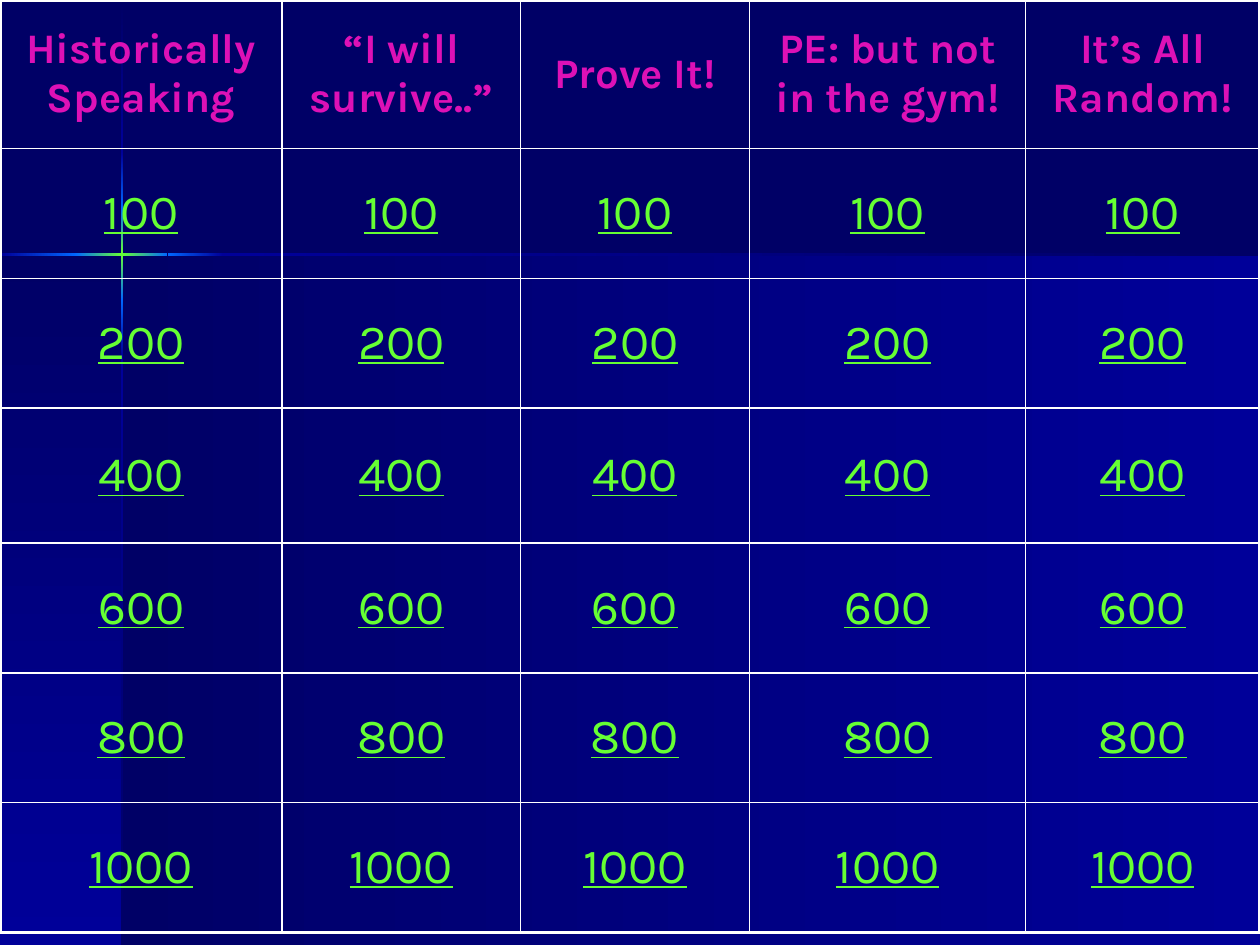
from pptx import Presentation, oxml, util as u
from pptx.dml.color import RGBColor
from pptx.enum import shapes, text
from pptx.oxml import ns

WIDTH, HEIGHT = 10, 7.5
STAR_X, STAR_Y, RAY = 0.97, 2.02, 0.02  # centre of the star, thickness of its rays
FONT = "Karla"
COLORS = {
    "night": "000066",
    "navy": "000099",
    "azure": "0066FF",
    "lime": "66FF33",
    "magenta": "DD11B6",
    "white": "FFFFFF",
}
CATEGORIES = ["Historically Speaking", "“I will survive..”", "Prove It!",
              "PE: but not in the gym!", "It’s All Random!"]
POINTS = [100, 200, 400, 600, 800, 1000]
COLUMN_WIDTHS = [2.24, 1.89, 1.82, 2.19, 1.86]
ROW_HEIGHTS = [1.18, 1.03, 1.03, 1.07, 1.03, 1.03, 1.03]
INNER, OUTER = 1, 2.25  # border widths in points

# Each ray segment: start, end, colours along it
GLOW = ["azure", "lime", "azure"]
VERTICAL_RAY = [
    (0.01, 1.21, ["night", "navy"]),
    (2.82, HEIGHT, ["navy", "night"]),
    (2.38, 2.82, ["azure", "navy"]),
    (1.21, 1.65, ["navy", "azure"]),
    (1.65, 2.38, GLOW),
]
HORIZONTAL_RAY = [
    (1.77, WIDTH, ["navy", "night"]),
    (0, 0.61, ["navy", "azure"]),
    (1.33, 1.77, ["azure", "navy"]),
    (0.6, 1.33, GLOW),
]


def rgb(name):
    return RGBColor.from_string(COLORS[name])


def add_gradient_panel(slide, left, top, width, height, names, angle):
    """Rectangle with evenly spaced colours, running right (0) or down (90)."""
    panel = slide.shapes.add_shape(
        shapes.MSO_SHAPE.RECTANGLE,
        *(u.Inches(v) for v in (left, top, width, height)))
    panel.shadow.inherit = False
    panel.line.fill.background()
    stops = "".join(
        f'<a:gs pos="{100000 * i // (len(names) - 1)}">'
        f'<a:srgbClr val="{COLORS[name]}"/></a:gs>'
        for i, name in enumerate(names))
    gradient = oxml.parse_xml(
        f'<a:gradFill {ns.nsdecls("a")}><a:gsLst>{stops}</a:gsLst>'
        f'<a:lin ang="{angle * 60000}" scaled="0"/></a:gradFill>')
    panel._element.spPr.insert(2, gradient)  # after position and geometry


def add_backdrop(slide):
    # Two large panels below the horizon
    below = HEIGHT - STAR_Y
    fade = ["night", "navy"]
    add_gradient_panel(slide, STAR_X, STAR_Y, WIDTH - STAR_X, below, fade, 0)
    add_gradient_panel(slide, 0, STAR_Y, STAR_X, below, fade, 90)
    # Star rays
    for start, end, names in VERTICAL_RAY:
        add_gradient_panel(slide, STAR_X - RAY / 2, start, RAY, end - start, names, 90)
    for start, end, names in HORIZONTAL_RAY:
        add_gradient_panel(slide, start, STAR_Y - RAY / 2, end - start, RAY, names, 0)


def set_borders(cell, widths):
    for side, points in zip("LRTB", widths):
        cell._tc.get_or_add_tcPr().append(oxml.parse_xml(
            f'<a:ln{side} {ns.nsdecls("a")} w="{u.Pt(points)}"><a:solidFill>'
            f'<a:srgbClr val="{COLORS["white"]}"/></a:solidFill></a:ln{side}>'))


def write_cell(cell, words, size, color, bold=False, underline=False):
    cell.vertical_anchor = text.MSO_ANCHOR.MIDDLE
    paragraph = cell.text_frame.paragraphs[0]
    paragraph.text = words
    paragraph.alignment = text.PP_ALIGN.CENTER
    paragraph._p.get_or_add_pPr().append(oxml.parse_xml(
        f'<a:spcBef {ns.nsdecls("a")}><a:spcPct val="20000"/></a:spcBef>'))
    font = paragraph.runs[0].font
    font.name, font.size = FONT, u.Pt(size)
    font.bold, font.underline = bold, underline
    font.color.rgb = rgb(color)


def add_board(slide):
    rows, columns = len(ROW_HEIGHTS), len(COLUMN_WIDTHS)
    board = slide.shapes.add_table(
        rows, columns, 0, 0,
        u.Inches(sum(COLUMN_WIDTHS)), u.Inches(sum(ROW_HEIGHTS))).table
    board.first_row = board.horz_banding = False
    for column, width in zip(board.columns, COLUMN_WIDTHS):
        column.width = u.Inches(width)
    for row, height in zip(board.rows, ROW_HEIGHTS):
        row.height = u.Inches(height)

    for r in range(rows):
        for c in range(columns):
            cell = board.cell(r, c)
            on_edge = (c == 0, c == columns - 1, r == 0, r == rows - 1)
            set_borders(cell, [OUTER if edge else INNER for edge in on_edge])
            cell.fill.background()
            if r == 0:
                write_cell(cell, CATEGORIES[c], 24, "magenta", bold=True)
            else:
                write_cell(cell, str(POINTS[r - 1]), 28, "lime", underline=True)


def main():
    deck = Presentation()
    deck.slide_width, deck.slide_height = u.Inches(WIDTH), u.Inches(HEIGHT)
    slide = deck.slides.add_slide(deck.slide_layouts[6])
    slide.background.fill.solid()
    slide.background.fill.fore_color.rgb = rgb("night")
    add_backdrop(slide)
    add_board(slide)
    deck.save("out.pptx")


if __name__ == "__main__":
    main()
